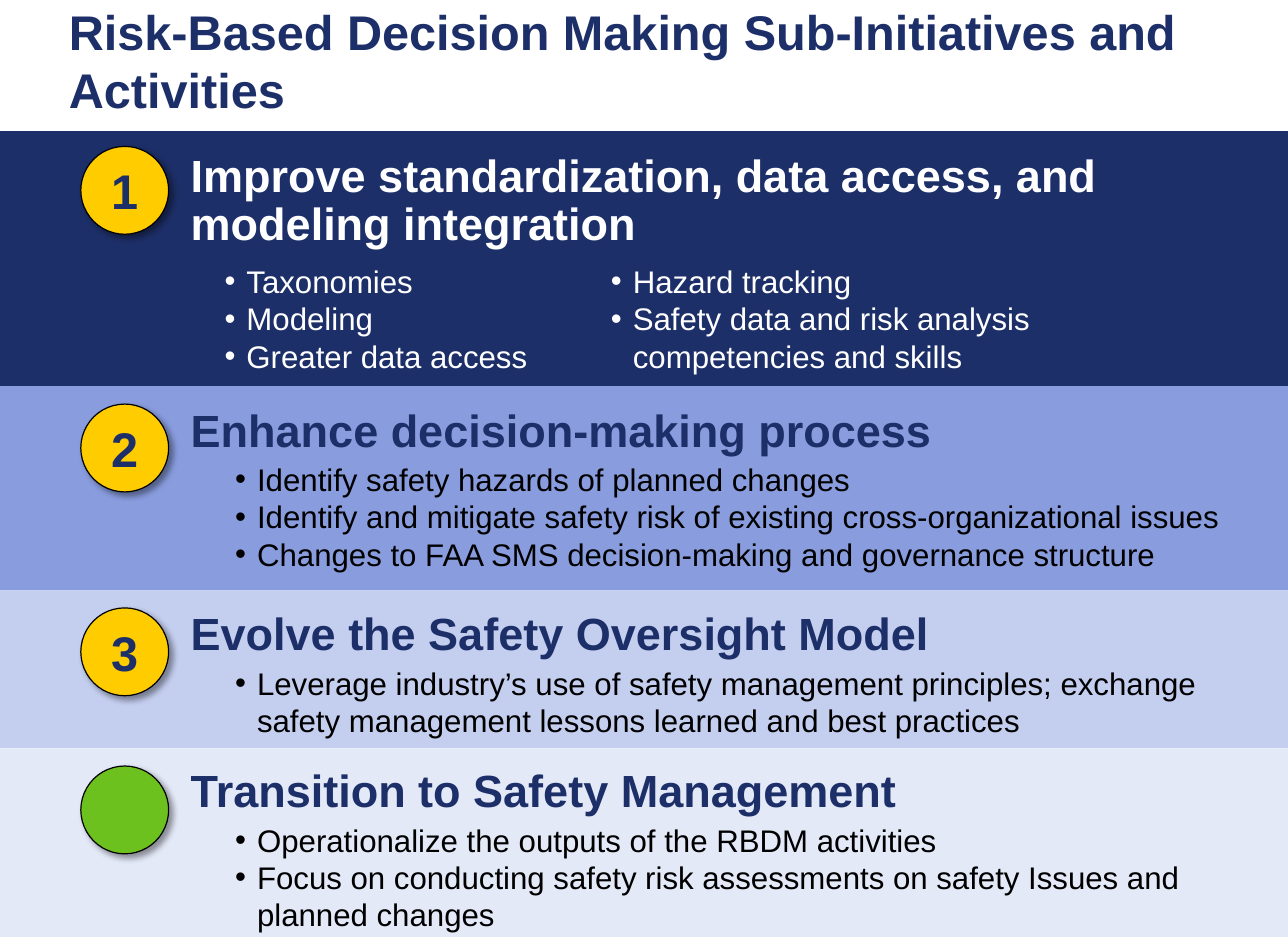
from lxml import etree
from pptx import Presentation
from pptx.dml.color import RGBColor
from pptx.enum.shapes import MSO_SHAPE
from pptx.enum.text import MSO_ANCHOR, PP_ALIGN
from pptx.oxml import parse_xml
from pptx.oxml.ns import nsdecls, qn
from pptx.util import Pt

RECTANGLE, OVAL = MSO_SHAPE.RECTANGLE, MSO_SHAPE.OVAL
TOP, MIDDLE = MSO_ANCHOR.TOP, MSO_ANCHOR.MIDDLE
CENTER = PP_ALIGN.CENTER

NAVY = RGBColor(0x1D, 0x2F, 0x68)
BLUE = RGBColor(0x89, 0x9D, 0xDE)
LIGHT_BLUE = RGBColor(0xC4, 0xCE, 0xEF)
PALE_BLUE = RGBColor(0xE4, 0xE9, 0xF8)
GOLD = RGBColor(0xFF, 0xCC, 0x00)
GREEN = RGBColor(0x6D, 0xC1, 0x1E)
WHITE = RGBColor(0xFF, 0xFF, 0xFF)
BLACK = RGBColor(0, 0, 0)

# Content
TITLE = "Risk-Based Decision Making Sub-Initiatives and Activities"
# Each list: left, top, width, items
INITIATIVES = [
    dict(number="1", heading="Improve standardization, data access, and modeling integration",
         top=80.6, badge_top=90, heading_top=90.7, band=NAVY, badge=GOLD,
         heading_color=WHITE, item_color=WHITE,
         lists=[(131, 157.7, 202, ["Taxonomies", "Modeling", "Greater data access"]),
                (368.6, 157.7, 297, ["Hazard tracking",
                                     "Safety data and risk analysis\vcompetencies and skills"])]),
    dict(number="2", heading="Enhance decision-making process",
         top=237.4, badge_top=248.4, heading_top=247.7, band=BLUE, badge=GOLD,
         heading_color=NAVY, item_color=BLACK,
         lists=[(137.5, 279.4, 625, [
             "Identify safety hazards of planned changes",
             "Identify and mitigate safety risk of existing cross-organizational issues",
             "Changes to FAA SMS decision-making and governance structure"])]),
    dict(number="3", heading="Evolve the Safety Oversight Model",
         top=362.9, badge_top=373.7, heading_top=372.2, band=LIGHT_BLUE, badge=GOLD,
         heading_color=NAVY, item_color=BLACK,
         lists=[(137.5, 404.6, 621, [
             "Leverage industry’s use of safety management principles; exchange "
             "safety management lessons learned and best practices"])]),
    dict(number="", heading="Transition to Safety Management",
         top=460, badge_top=470.9, heading_top=468.7, band=PALE_BLUE, badge=GREEN,
         heading_color=NAVY, item_color=BLACK,
         lists=[(137.5, 501.1, 621, [
             "Operationalize the outputs of the RBDM activities",
             "Focus on conducting safety risk assessments on safety Issues and planned changes"])]),
]

# Layout
SLIDE_W, SLIDE_H = 792, 576
BADGE_LEFT, BADGE_SIZE = 49.7, 54
HEADING_LEFT, HEADING_W, HEADING_H = 109.4, 629.3, 50
TITLE_SIZE, HEADING_SIZE, ITEM_SIZE = 29.9, 27.7, 19.2
ITEM_INDENT, ITEM_LINE = 13.5, 23

prs = Presentation()
prs.slide_width, prs.slide_height = Pt(SLIDE_W), Pt(SLIDE_H)
slide = prs.slides.add_slide(prs.slide_layouts[6])


def add_filled(kind, left, top, width, height, color):
    shape = slide.shapes.add_shape(kind, Pt(left), Pt(top), Pt(width), Pt(height))
    shape.shadow.inherit = False
    shape.fill.solid()
    shape.fill.fore_color.rgb = color
    shape.line.fill.background()
    return shape


def add_box(left, top, width, height, inset=7.2, anchor=TOP):
    box = slide.shapes.add_textbox(Pt(left), Pt(top), Pt(width), Pt(height))
    frame = box.text_frame
    frame.word_wrap = True
    frame.vertical_anchor = anchor
    frame.margin_left = frame.margin_right = Pt(inset)
    frame.margin_top = frame.margin_bottom = Pt(3.6)
    return frame


def write(paragraph, text, size, color, bold=False):
    for index, line in enumerate(text.split("\v")):
        if index:
            paragraph.add_line_break()
        run = paragraph.add_run()
        run.text = line
        run.font.name = "Arial"
        run.font.size = Pt(size)
        run.font.bold = bold
        run.font.color.rgb = color


def add_badge(number, top, color):
    badge = add_filled(OVAL, BADGE_LEFT, top, BADGE_SIZE, BADGE_SIZE, color)
    badge.line.color.rgb = BLACK
    badge.line.width = Pt(0.75)
    # Soft shadow to the lower right
    effects = badge.element.spPr.find(qn("a:effectLst"))
    effects.append(parse_xml(
        f'<a:outerShdw {nsdecls("a")} blurRad="50800" dist="38100" dir="2700000">'
        '<a:srgbClr val="000000"><a:alpha val="40000"/></a:srgbClr></a:outerShdw>'))
    if number:
        frame = badge.text_frame
        frame.word_wrap = False
        frame.vertical_anchor = MIDDLE
        label = frame.paragraphs[0]
        label.alignment = CENTER
        write(label, number, TITLE_SIZE, NAVY, bold=True)


def add_list(left, top, width, items, color):
    frame = add_box(left, top, width, ITEM_LINE * 3 + 7.2)
    for index, item in enumerate(items):
        paragraph = frame.add_paragraph() if index else frame.paragraphs[0]
        write(paragraph, item, ITEM_SIZE, color)
        props = paragraph._p.get_or_add_pPr()
        props.set("marL", str(Pt(ITEM_INDENT)))
        props.set("indent", str(-Pt(ITEM_INDENT)))
        etree.SubElement(props, qn("a:buFont"), typeface="Arial")
        etree.SubElement(props, qn("a:buChar"), char="•")


# Title
title = add_box(35.3, 1.4, 744.5, 71.3, anchor=MIDDLE)
write(title.paragraphs[0], TITLE, TITLE_SIZE, NAVY, bold=True)

# Bands: each one reaches down to the next
bottoms = [initiative["top"] for initiative in INITIATIVES[1:]] + [SLIDE_H]
for initiative, bottom in zip(INITIATIVES, bottoms):
    top = initiative["top"]
    add_filled(RECTANGLE, 0, top, SLIDE_W, bottom - top, initiative["band"])
    add_badge(initiative["number"], initiative["badge_top"], initiative["badge"])
    heading = add_box(HEADING_LEFT, initiative["heading_top"], HEADING_W, HEADING_H,
                      inset=7.9).paragraphs[0]
    heading.line_spacing = 0.9
    heading.space_before = Pt(HEADING_SIZE * 0.2)
    write(heading, initiative["heading"], HEADING_SIZE, initiative["heading_color"], bold=True)
    for left, list_top, width, items in initiative["lists"]:
        add_list(left, list_top, width, items, initiative["item_color"])

prs.save("out.pptx")
